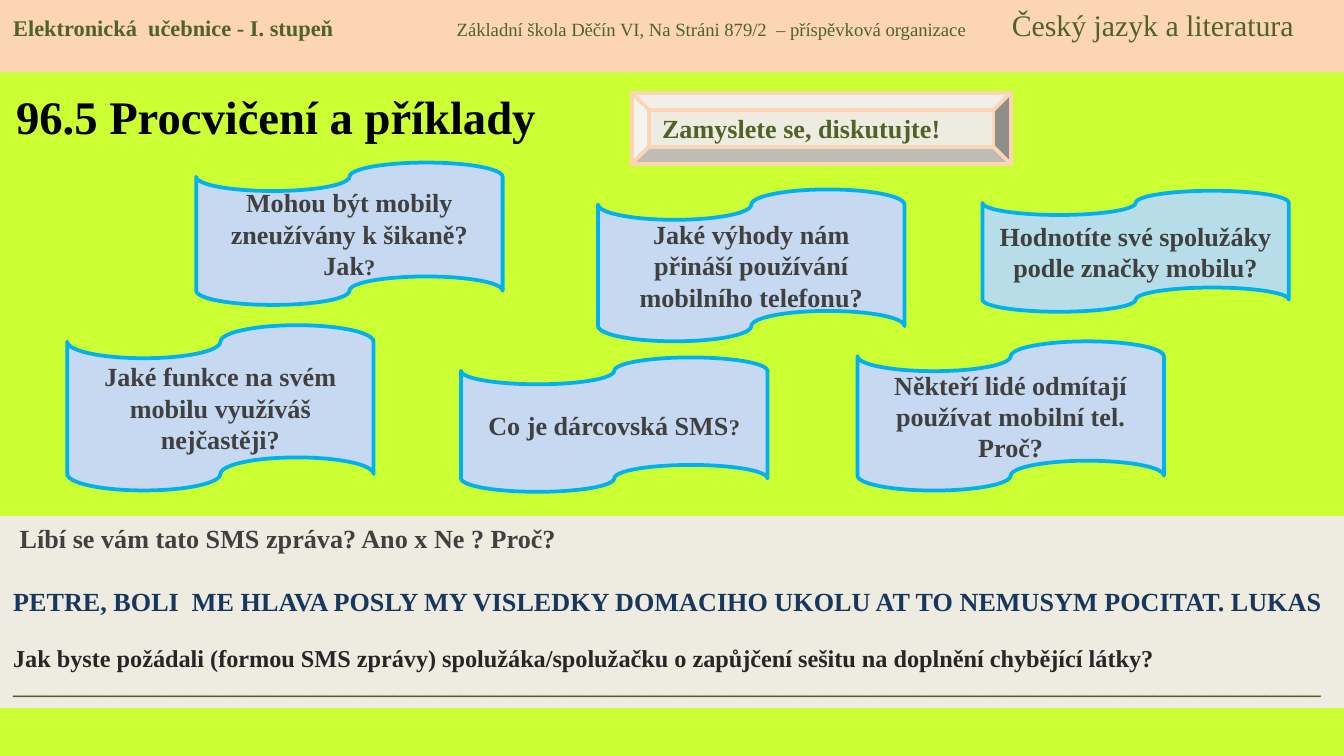
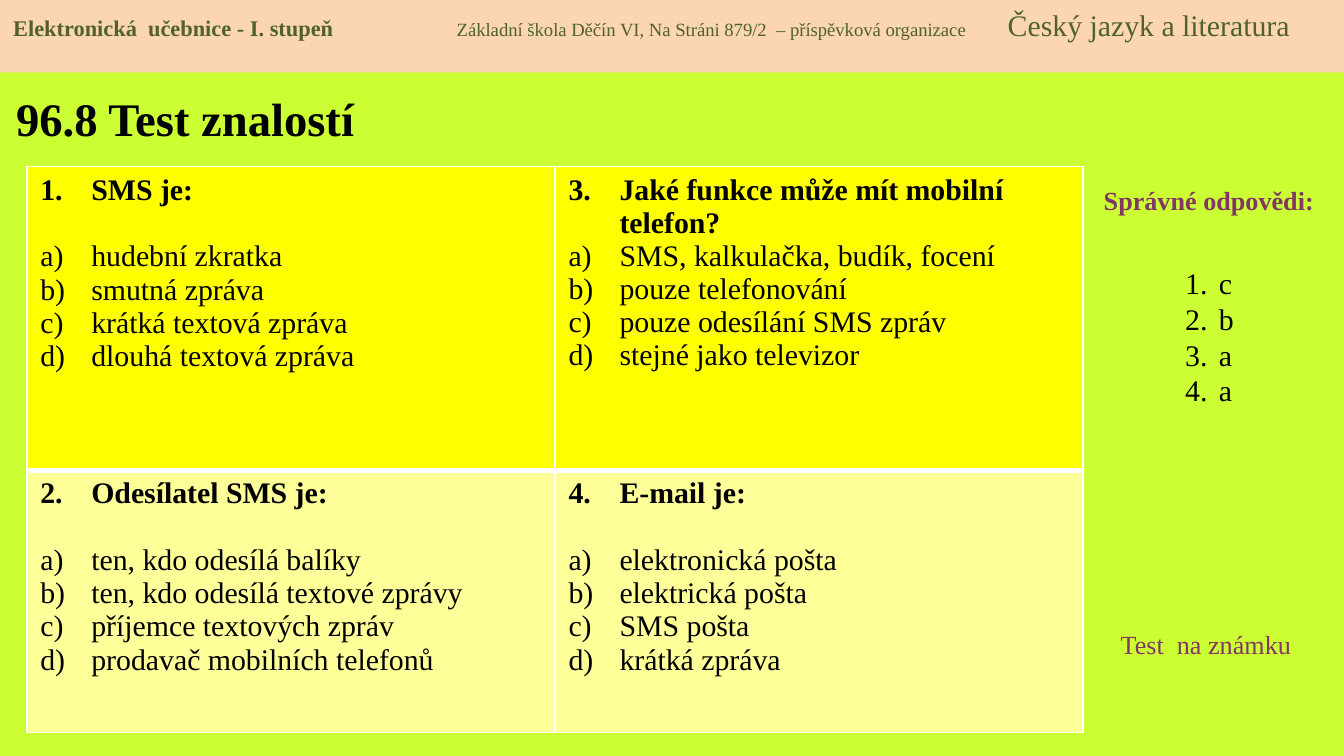
import pptx
import pptx.dml.color
import pptx.enum.shapes
import pptx.enum.text
import pptx.oxml
import pptx.oxml.ns
import pptx.util
from lxml import etree

Inches = pptx.util.Inches
Pt = pptx.util.Pt
MSO_SHAPE = pptx.enum.shapes.MSO_SHAPE
ALIGN = pptx.enum.text.PP_ALIGN
ANCHOR = pptx.enum.text.MSO_ANCHOR
qn = pptx.oxml.ns.qn

FONT = "Times New Roman"
COLOURS = {
    "background": "CCFF33",
    "band": "FCD5B5",
    "panel": "EEECE1",
    "tape": "C6D9F1",
    "tape_accent": "B7DEE8",
    "tape_line": "00B0F0",
    "green": "4F6228",
    "grey": "404040",
    "dark": "262626",
    "navy": "17375E",
    "purple": "813763",
    "black": "000000",
    "white": "FFFFFF",
    "yellow": "FFFF00",
    "pale_yellow": "FFFF99",
}

# text, left, top, height, fill, size of the closing question mark
TAPES = [
    ("Někteří lidé odmítají používat mobilní tel. Proč?", 6.38, 2.54, 1.11, "tape", 14),
    ("Jaké výhody nám přináší používání mobilního telefonu?", 4.45, 1.41, 1.13, "tape", 14),
    ("Hodnotíte své spolužáky podle značky mobilu?", 7.31, 1.42, 0.9, "tape_accent", 14),
    ("Mohou být mobily zneužívány k šikaně? Jak?", 1.46, 1.21, 1.06, "tape", 12),
    ("Jaké funkce na svém mobilu využíváš nejčastěji?", 0.5, 2.42, 1.23, "tape", 14),
    ("Co je dárcovská SMS?", 3.43, 2.66, 1, "tape", 12),
]
TAPE_WIDTH = 2.28

# question lines and options, filling the table column by column
QUESTIONS = [
    (["SMS je:"], ["hudební zkratka", "smutná zpráva",
                   "krátká textová zpráva", "dlouhá textová zpráva"]),
    (["Odesílatel SMS je:"], ["ten, kdo odesílá balíky", "ten, kdo odesílá textové zprávy",
                              "příjemce textových zpráv", "prodavač mobilních telefonů"]),
    (["Jaké funkce může mít mobilní", "telefon?"],
     ["SMS, kalkulačka, budík, focení", "pouze telefonování",
      "pouze odesílání SMS zpráv", "stejné jako televizor"]),
    (["E-mail je:"], ["elektronická pošta", "elektrická pošta", "SMS pošta", "krátká zpráva"]),
]
QUESTION_INDENT = 0.38
ROW_HEIGHTS = [2.26, 1.95]
ROW_FILLS = ["yellow", "pale_yellow"]


def rgb(name):
    return pptx.dml.color.RGBColor.from_string(COLOURS[name])


def add_text(paragraph, text, size=14, colour="black", bold=False):
    run = paragraph.add_run()
    run.text = text
    run.font.name = FONT
    run.font.size = Pt(size)
    run.font.bold = bold
    run.font.color.rgb = rgb(colour)


def next_paragraph(text_frame):
    """Return the empty first paragraph, or a new one after the last."""
    first = text_frame.paragraphs[0]
    return text_frame.add_paragraph() if first.runs else first


def add_numbered(text_frame, text, scheme, indent, start=1, **text_format):
    paragraph = next_paragraph(text_frame)
    add_text(paragraph, text, **text_format)
    properties = paragraph._p.get_or_add_pPr()
    properties.set("marL", str(Inches(indent)))
    properties.set("indent", str(-Inches(indent)))
    number = etree.SubElement(properties, qn("a:buAutoNum"), type=scheme)
    if start > 1:
        number.set("startAt", str(start))
    return paragraph


def add_panel(slide, kind, left, top, width, height, fill, line=None, anchor=ANCHOR.TOP):
    shape = slide.shapes.add_shape(kind, Inches(left), Inches(top), Inches(width), Inches(height))
    shape.shadow.inherit = False
    shape.fill.solid()
    shape.fill.fore_color.rgb = rgb(fill)
    if line:
        shape.line.color.rgb = rgb(line)
        shape.line.width = Pt(2)
    else:
        shape.line.fill.background()
    shape.text_frame.word_wrap = True
    shape.text_frame.vertical_anchor = anchor
    shape.text_frame.paragraphs[0].alignment = ALIGN.LEFT
    return shape


def add_text_box(slide, left, top, width, height):
    box = slide.shapes.add_textbox(Inches(left), Inches(top), Inches(width), Inches(height))
    box.text_frame.word_wrap = True
    return box.text_frame


def add_header(slide, subject_left):
    band = add_panel(slide, MSO_SHAPE.RECTANGLE, 0, 0, 10, 0.54, "band")
    paragraph = band.text_frame.paragraphs[0]
    tabs = etree.SubElement(paragraph._p.get_or_add_pPr(), qn("a:tabLst"))
    for position in (3.3, subject_left):
        etree.SubElement(tabs, qn("a:tab"), pos=str(Inches(position)), algn="l")
    add_text(paragraph, "Elektronická  učebnice - I. stupeň\t", size=12, colour="green", bold=True)
    add_text(paragraph, "Základní škola Děčín VI, Na Stráni 879/2  – příspěvková organizace\t",
             size=10, colour="green")
    add_text(paragraph, "Český jazyk a literatura", size=16, colour="green")


def add_lesson_slide(presentation, title_text, title_top, title_width, subject_left):
    slide = presentation.slides.add_slide(presentation.slide_layouts[5])
    slide.background.fill.solid()
    slide.background.fill.fore_color.rgb = rgb("background")
    title = slide.shapes.title
    title.left, title.top = Inches(0.02), Inches(title_top)
    title.width, title.height = Inches(title_width), Inches(0.65)
    title.text_frame.vertical_anchor = ANCHOR.MIDDLE
    paragraph = title.text_frame.paragraphs[0]
    paragraph.alignment = ALIGN.LEFT
    add_text(paragraph, title_text, size=25, bold=True)
    add_header(slide, subject_left)
    return slide


def add_tape(slide, text, left, top, height, fill, mark_size):
    tape = add_panel(slide, MSO_SHAPE.FLOWCHART_PUNCHED_TAPE, left, top, TAPE_WIDTH, height,
                     fill, line="tape_line", anchor=ANCHOR.MIDDLE)
    paragraph = tape.text_frame.paragraphs[0]
    paragraph.alignment = ALIGN.CENTER
    add_text(paragraph, text[:-1], colour="grey", bold=True)
    add_text(paragraph, text[-1], size=mark_size, colour="grey", bold=True)


def add_message_panel(slide):
    panel = add_panel(slide, MSO_SHAPE.RECTANGLE, 0, 3.84, 10, 1.43, "panel")
    lines = [
        (" Líbí se vám tato SMS zpráva? Ano x Ne ? Proč?", 14, "grey", 0),
        ("PETRE, BOLI  ME HLAVA POSLY MY VISLEDKY DOMACIHO UKOLU AT TO NEMUSYM POCITAT. LUKAS",
         14, "navy", 17),
        ("Jak byste požádali (formou SMS zprávy) spolužáka/spolužačku o zapůjčení sešitu "
         "na doplnění chybějící látky?", 13, "dark", 14),
        ("_" * 117, 12, "green", 0),
    ]
    for text, size, colour, gap in lines:
        paragraph = next_paragraph(panel.text_frame)
        paragraph.alignment = ALIGN.LEFT
        paragraph.space_before = Pt(gap)
        add_text(paragraph, text, size=size, colour=colour, bold=True)


def set_cell_borders(cell, widths):
    """Draw white borders; widths maps a side (L, R, T, B) to points."""
    properties = cell._tc.get_or_add_tcPr()
    for index, (side, width) in enumerate(widths.items()):
        border = etree.Element(qn(f"a:ln{side}"), w=str(Pt(width)))
        fill = etree.SubElement(border, qn("a:solidFill"))
        etree.SubElement(fill, qn("a:srgbClr"), val=COLOURS["white"])
        properties.insert(index, border)


def fill_question(cell, number, question_lines, options):
    heading = add_numbered(cell.text_frame, question_lines[0], "arabicPeriod", QUESTION_INDENT,
                           start=number, size=16, bold=True)
    if len(question_lines) == 1:
        heading.space_after = Pt(18)
    for line in question_lines[1:]:
        paragraph = next_paragraph(cell.text_frame)
        paragraph._p.get_or_add_pPr().set("marL", str(Inches(QUESTION_INDENT)))
        add_text(paragraph, line, size=16, bold=True)
    for option in options:
        add_numbered(cell.text_frame, option, "alphaLcParenR", QUESTION_INDENT, size=16)


def add_question_table(slide):
    frame = slide.shapes.add_table(2, 2, Inches(0.2), Inches(1.24),
                                   Inches(7.86), Inches(sum(ROW_HEIGHTS)))
    table = frame.table
    table.first_row = table.horz_banding = False
    for row, height in zip(table.rows, ROW_HEIGHTS):
        row.height = Inches(height)
    for index, (question_lines, options) in enumerate(QUESTIONS):
        column, row = divmod(index, 2)
        cell = table.cell(row, column)
        cell.fill.solid()
        cell.fill.fore_color.rgb = rgb(ROW_FILLS[row])
        set_cell_borders(cell, {"L": 1, "R": 1, "T": 3 if row else 1, "B": 1 if row else 3})
        fill_question(cell, index + 1, question_lines, options)


def build_practice_slide(presentation):
    slide = add_lesson_slide(presentation, "96.5 Procvičení a příklady", 0.54, 4.37, 7.43)
    add_message_panel(slide)
    prompt = add_panel(slide, MSO_SHAPE.BEVEL, 4.7, 0.69, 2.82, 0.53, "panel",
                       line="band", anchor=ANCHOR.MIDDLE)
    prompt.adjustments[0] = 0.24
    add_text(prompt.text_frame.paragraphs[0], "Zamyslete se, diskutujte!",
             colour="green", bold=True)
    for tape in TAPES:
        add_tape(slide, *tape)


def build_test_slide(presentation):
    slide = add_lesson_slide(presentation, "96.8 Test znalostí", 0.55, 3.19, 7.4)
    add_question_table(slide)
    answers_title = add_text_box(slide, 8.05, 1.32, 1.89, 0.34).paragraphs[0]
    answers_title.alignment = ALIGN.CENTER
    add_text(answers_title, "Správné odpovědi:", colour="purple", bold=True)
    answers = add_text_box(slide, 8.72, 1.92, 0.55, 1.72)
    for letter in "cbaa":
        add_numbered(answers, letter, "arabicPeriod", 0.25, size=16)
    grade_note = add_text_box(slide, 8.24, 4.63, 1.57, 0.34).paragraphs[0]
    add_text(grade_note, "Test  na známku", colour="purple")


def main():
    presentation = pptx.Presentation()
    presentation.slide_width = Inches(10)
    presentation.slide_height = presentation.slide_width * 9 // 16
    build_practice_slide(presentation)
    build_test_slide(presentation)
    presentation.save("out.pptx")


if __name__ == "__main__":
    main()
